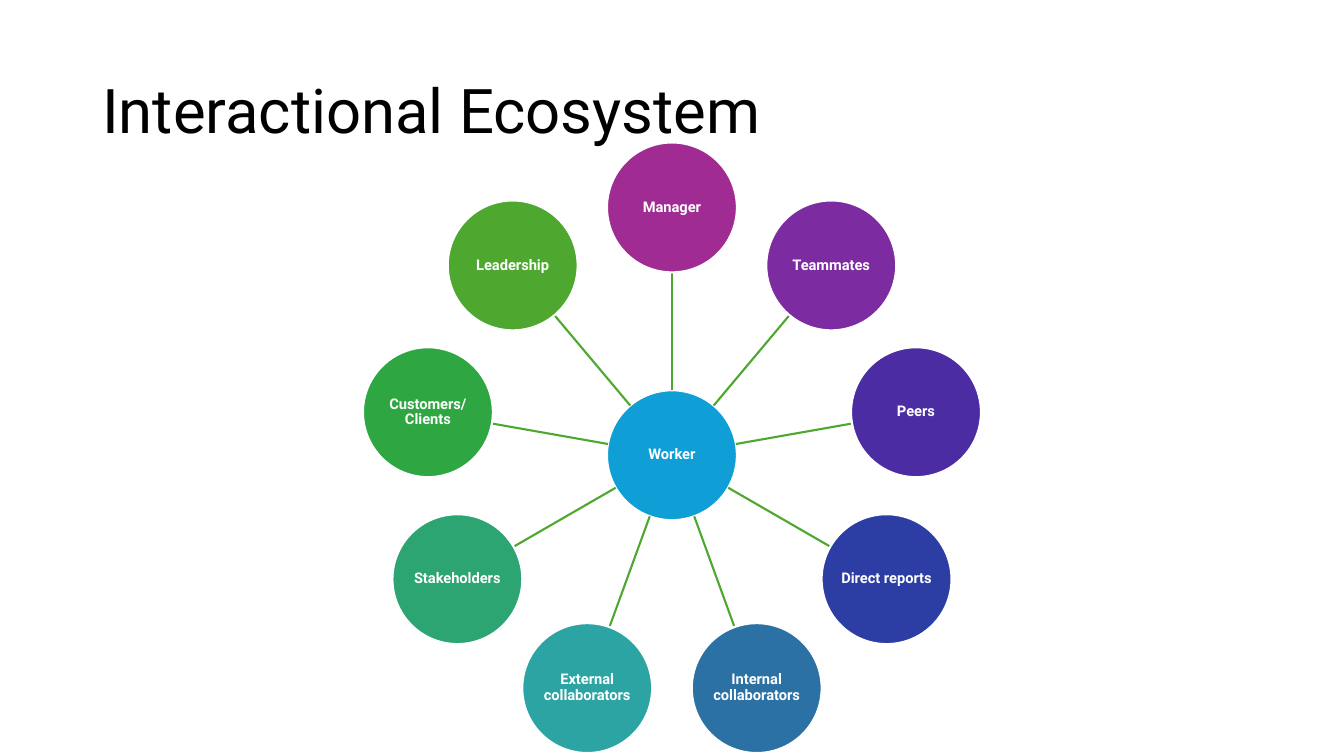
from math import cos, radians, sin

from pptx import Presentation
from pptx.dml.color import RGBColor
from pptx.enum.shapes import MSO_CONNECTOR as Connector, MSO_SHAPE as Shape
from pptx.enum.text import MSO_ANCHOR as Anchor, PP_ALIGN as Align
from pptx.oxml.ns import qn
from pptx.util import Pt

COLORS = {"text": "000000", "white": "FFFFFF", "spoke": "4EA72E", "worker": "0F9ED5"}
CENTER_X, CENTER_Y = 480, 325.2
ORBIT = 177
RADIUS = 46.4

# Clockwise from the top
ROLES = [
    ("Manager", "A02B93"),
    ("Teammates", "7C2BA1"),
    ("Peers", "4B2CA2"),
    ("Direct reports", "2C3EA3"),
    ("Internal collaborators", "2C71A4"),
    ("External collaborators", "2DA4A4"),
    ("Stakeholders", "2DA573"),
    ("Customers/Clients", "2EA641"),
    ("Leadership", "4EA72E"),
]


def write_text(frame, text, size, color, bold=False, align=Align.LEFT, inset=(7.2, 3.6)):
    frame.word_wrap = True
    frame.vertical_anchor = Anchor.MIDDLE
    frame.margin_left = frame.margin_right = Pt(inset[0])
    frame.margin_top = frame.margin_bottom = Pt(inset[1])
    para = frame.paragraphs[0]
    para.alignment = align
    para.line_spacing = 0.9
    span = para.add_run()
    span.text = text
    span.font.name = "Roboto"
    span.font.size = Pt(size)
    span.font.bold = bold
    span.font.color.rgb = RGBColor.from_string(color)


def orbit_point(angle, distance):
    """Point at a distance from the hub, with the angle clockwise from the top."""
    turn = radians(angle)
    return CENTER_X + distance * sin(turn), CENTER_Y - distance * cos(turn)


class Painter:
    line_width = 1.5

    def __init__(self, page):
        self.page = page

    def title(self, text, left, top, width, height):
        box = self.page.shapes.add_textbox(Pt(left), Pt(top), Pt(width), Pt(height))
        write_text(box.text_frame, text, 44, COLORS["text"])

    def circle(self, text, x, y, color):
        disc = self.page.shapes.add_shape(
            Shape.OVAL, Pt(x - RADIUS), Pt(y - RADIUS), Pt(2 * RADIUS), Pt(2 * RADIUS))
        disc.shadow.inherit = False
        disc.fill.solid()
        disc.fill.fore_color.rgb = RGBColor.from_string(color)
        disc.line.color.rgb = RGBColor.from_string(COLORS["white"])
        disc.line.width = Pt(self.line_width)
        write_text(disc.text_frame, text, 10.5, COLORS["white"], bold=True,
                   align=Align.CENTER, inset=(0.5, 0.5))

    def spoke(self, start, end):
        line = self.page.shapes.add_connector(
            Connector.STRAIGHT, *(Pt(value) for value in (*start, *end)))
        line.line.color.rgb = RGBColor.from_string(COLORS["spoke"])
        line.line.width = Pt(self.line_width)
        properties = line._element.spPr
        properties.append(properties.makeelement(qn("a:effectLst"), {}))


def main():
    deck = Presentation()
    deck.slide_width, deck.slide_height = Pt(960), Pt(540)
    painter = Painter(deck.slides.add_slide(deck.slide_layouts[6]))
    painter.title("Interactional Ecosystem", 66, 28.8, 828, 104.4)
    painter.circle("Worker", CENTER_X, CENTER_Y, COLORS["worker"])
    for index, (role, color) in enumerate(ROLES):
        angle = index * 360 / len(ROLES)
        painter.spoke(orbit_point(angle, RADIUS), orbit_point(angle, ORBIT - RADIUS))
        painter.circle(role, *orbit_point(angle, ORBIT), color)
    deck.save("out.pptx")


if __name__ == "__main__":
    main()
